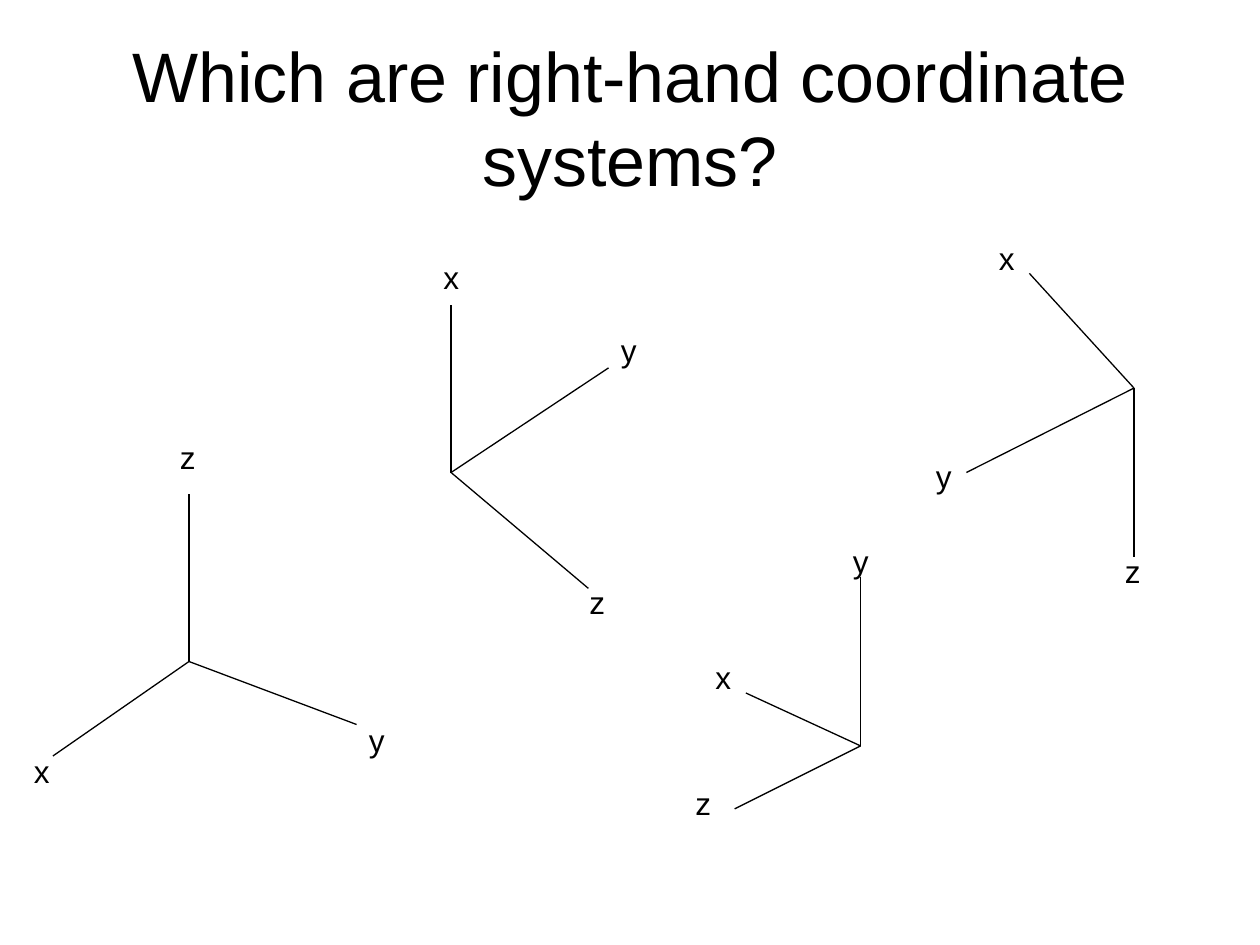
from pptx import Presentation
from pptx.dml.color import RGBColor
from pptx.enum import shapes, text
from pptx.oxml.ns import qn
from pptx.util import Inches, Pt
from lxml import etree

TITLE = "Which are right-hand coordinate systems?"
BLACK = "000000"
LABEL_WIDTHS = {"x": 0.58, "y": 0.42, "z": 0.42}
LABEL_HEIGHT = 0.4

# Each system: origin, then axis name, axis end, label corner
SYSTEMS = [
    ((1.5, 5.25), [("x", (0.42, 6), (0.17, 5.92)),
                   ("y", (2.83, 5.75), (2.83, 5.67)),
                   ("z", (1.5, 3.92), (1.33, 3.43))]),
    ((3.58, 3.75), [("x", (3.58, 2.42), (3.42, 2)),
                    ("y", (4.83, 2.92), (4.83, 2.58)),
                    ("z", (4.67, 4.67), (4.58, 4.58))]),
    ((6.83, 5.92), [("x", (5.92, 5.5), (5.58, 5.17)),
                    ("y", (6.83, 4.58), (6.67, 4.25)),
                    ("z", (5.83, 6.42), (5.42, 6.17))]),
    ((9, 3.08), [("x", (8.17, 2.17), (7.83, 1.85)),
                 ("y", (7.67, 3.75), (7.33, 3.58)),
                 ("z", (9, 4.42), (8.83, 4.33))]),
]


def color(value):
    return RGBColor.from_string(value)


def add_text(s, content, box, size=18, align=text.PP_ALIGN.LEFT,
             anchor=text.MSO_ANCHOR.TOP):
    sp = s.shapes.add_textbox(*map(Inches, box))
    tf = sp.text_frame
    tf.word_wrap = True
    tf.vertical_anchor = anchor
    p = tf.paragraphs[0]
    p.alignment = align
    r = p.add_run()
    r.text = content
    r.font.name = "Arial"
    r.font.size = Pt(size)
    r.font.color.rgb = color(BLACK)


def add_axis(group, start, end):
    line = group.shapes.add_connector(
        shapes.MSO_CONNECTOR.STRAIGHT, *map(Inches, (*start, *end)))
    line.line.color.rgb = color(BLACK)
    line.line.width = Pt(0.75)
    etree.SubElement(line._element.spPr, qn("a:effectLst"))


prs = Presentation()
prs.slide_width, prs.slide_height = Inches(10), Inches(7.5)
s = prs.slides.add_slide(prs.slide_layouts[6])

add_text(s, TITLE, (0.5, 0.3, 9, 1.25), size=40,
         align=text.PP_ALIGN.CENTER, anchor=text.MSO_ANCHOR.MIDDLE)

for origin, axes in SYSTEMS:
    group = s.shapes.add_group_shape()
    for name, end, corner in axes:
        add_axis(group, origin, end)
        add_text(s, name, (*corner, LABEL_WIDTHS[name], LABEL_HEIGHT))

prs.save("out.pptx")
